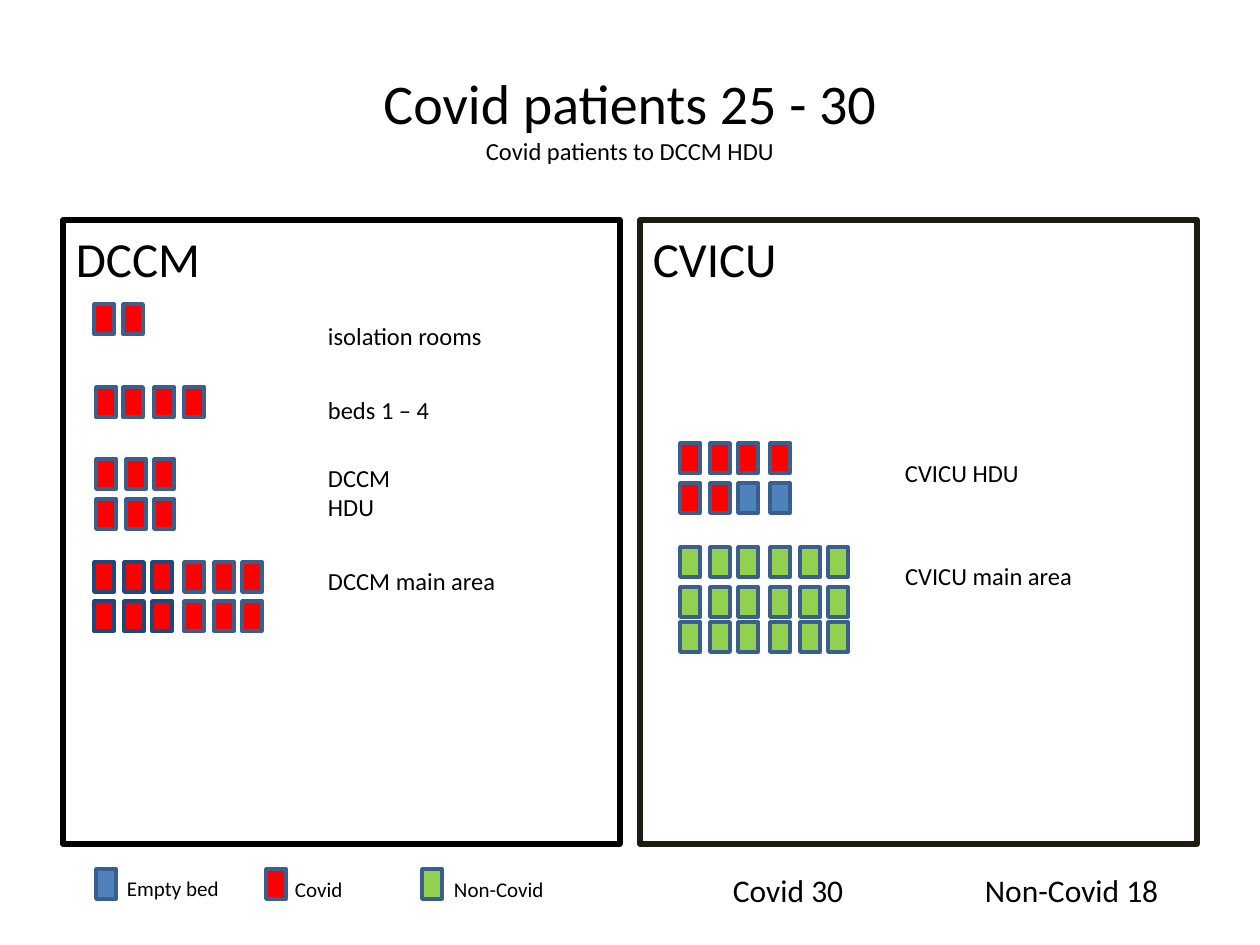
from dataclasses import dataclass
from typing import NamedTuple

from pptx import Presentation
from pptx.dml.color import RGBColor
from pptx.enum.shapes import MSO_SHAPE
from pptx.enum.text import MSO_ANCHOR, PP_ALIGN
from pptx.shapes.autoshape import Shape
from pptx.slide import Slide
from pptx.text.text import TextFrame, _Paragraph
from pptx.util import Emu, Pt

PIXELS_PER_INCH = 126


@dataclass(frozen=True)
class Theme:
    font: str = "Calibri"
    text: str = "000000"
    covid: str = "FF0000"
    non_covid: str = "92D050"
    empty: str = "4F81BD"
    bed_line: str = "3A5F8C"
    dark_bed_line: str = "1F497D"
    dccm_line: str = "000000"
    cvicu_line: str = "1E1C11"
    title_size: int = 32
    heading_size: int = 28
    total_size: int = 18
    label_size: int = 14
    legend_size: int = 12
    panel_line_width: int = 3
    bed_line_width: int = 2


THEME = Theme()


class Box(NamedTuple):
    left: int
    top: int
    width: int
    height: int


class BedStyle(NamedTuple):
    fill: str
    line: str


class Panel(NamedTuple):
    heading: str
    box: Box
    line: str


class BedGroup(NamedTuple):
    left: int
    tops: tuple[int, ...]
    rows: tuple[str, ...]
    offsets: tuple[int, ...] = (0, 30, 58, 90, 120, 148)


class Label(NamedTuple):
    text: str
    left: int
    top: int
    size: int


class LegendEntry(NamedTuple):
    code: str
    bed_left: int
    label: Label


BED_WIDTH, BED_HEIGHT = 20, 30
LEGEND_TOP = 869
BED_STYLES = {
    "C": BedStyle(THEME.covid, THEME.bed_line),
    "D": BedStyle(THEME.covid, THEME.dark_bed_line),
    "N": BedStyle(THEME.non_covid, THEME.bed_line),
    "E": BedStyle(THEME.empty, THEME.bed_line),
}
TITLE_BOX = Box(63, 38, 1134, 158)
PANELS = (
    Panel("DCCM", Box(63, 220, 557, 624), THEME.dccm_line),
    Panel("CVICU", Box(640, 220, 557, 624), THEME.cvicu_line),
)
BED_GROUPS = (
    BedGroup(94, (304,), ("CC",), (0, 29)),
    BedGroup(96, (387,), ("CCCC",), (0, 27, 58, 88)),
    BedGroup(96, (459, 499), ("CCC", "CCC")),
    BedGroup(94, (562, 601), ("DDDCCC", "DDDCCC")),
    BedGroup(680, (443, 483), ("CCCC", "CCEE")),
    BedGroup(680, (547, 587, 622), ("NNNNNN",) * 3),
)
LABELS = (
    Label("isolation rooms", 328, 321, THEME.label_size),
    Label("beds 1 – 4", 328, 395, THEME.label_size),
    Label("DCCM HDU", 328, 463, THEME.label_size),
    Label("DCCM main area", 328, 566, THEME.label_size),
    Label("CVICU HDU", 905, 458, THEME.label_size),
    Label("CVICU main area", 905, 561, THEME.label_size),
    Label("Covid 30", 733, 871, THEME.total_size),
    Label("Non-Covid 18", 985, 871, THEME.total_size),
)
LEGEND = (
    LegendEntry("E", 96, Label("Empty bed", 127, 876, THEME.legend_size)),
    LegendEntry("C", 266, Label("Covid", 295, 877, THEME.legend_size)),
    LegendEntry("N", 422, Label("Non-Covid", 454, 877, THEME.legend_size)),
)


def px(length: int) -> Emu:
    return Emu(round(length * 914400 / PIXELS_PER_INCH))


def place(box: Box) -> tuple[Emu, ...]:
    return tuple(px(length) for length in box)


def add_run(paragraph: _Paragraph, text: str, size: int) -> None:
    run = paragraph.add_run()
    run.text = text
    run.font.name = THEME.font
    run.font.size = Pt(size)
    run.font.color.rgb = RGBColor.from_string(THEME.text)


def set_margins(frame: TextFrame, side: int, top: int) -> None:
    frame.margin_left = frame.margin_right = px(side)
    frame.margin_top = frame.margin_bottom = px(top)


def add_rectangle(slide: Slide, box: Box, line: str, line_width: int) -> Shape:
    shape = slide.shapes.add_shape(MSO_SHAPE.RECTANGLE, *place(box))
    shape.shadow.inherit = False
    shape.line.color.rgb = RGBColor.from_string(line)
    shape.line.width = Pt(line_width)
    return shape


def add_title(slide: Slide) -> None:
    frame = slide.shapes.add_textbox(*place(TITLE_BOX)).text_frame
    frame.word_wrap = True
    frame.vertical_anchor = MSO_ANCHOR.MIDDLE
    paragraph = frame.paragraphs[0]
    paragraph.alignment = PP_ALIGN.CENTER
    add_run(paragraph, "Covid patients 25 - 30", THEME.title_size)
    paragraph.add_line_break()
    add_run(paragraph, "Covid patients to DCCM HDU", THEME.label_size)


def add_panel(slide: Slide, panel: Panel) -> None:
    shape = add_rectangle(slide, panel.box, panel.line, THEME.panel_line_width)
    shape.fill.background()
    frame = shape.text_frame
    frame.vertical_anchor = MSO_ANCHOR.TOP
    set_margins(frame, 13, 9)
    paragraph = frame.paragraphs[0]
    paragraph.alignment = PP_ALIGN.LEFT
    add_run(paragraph, panel.heading, THEME.heading_size)


def add_bed(slide: Slide, left: int, top: int, code: str) -> None:
    style = BED_STYLES[code]
    box = Box(left, top, BED_WIDTH, BED_HEIGHT)
    shape = add_rectangle(slide, box, style.line, THEME.bed_line_width)
    shape.fill.solid()
    shape.fill.fore_color.rgb = RGBColor.from_string(style.fill)


def add_bed_group(slide: Slide, group: BedGroup) -> None:
    for top, row in zip(group.tops, group.rows):
        for offset, code in zip(group.offsets, row):
            add_bed(slide, group.left + offset, top, code)


def add_label(slide: Slide, label: Label) -> None:
    box = Box(label.left, label.top, len(label.text) * label.size, label.size * 2)
    frame = slide.shapes.add_textbox(*place(box)).text_frame
    frame.word_wrap = True
    set_margins(frame, 0, 0)
    add_run(frame.paragraphs[0], label.text, label.size)


def main() -> None:
    presentation = Presentation()
    presentation.slide_width, presentation.slide_height = px(1260), px(945)
    slide = presentation.slides.add_slide(presentation.slide_layouts[6])
    add_title(slide)
    for panel in PANELS:
        add_panel(slide, panel)
    for group in BED_GROUPS:
        add_bed_group(slide, group)
    for entry in LEGEND:
        add_bed(slide, entry.bed_left, LEGEND_TOP, entry.code)
        add_label(slide, entry.label)
    for label in LABELS:
        add_label(slide, label)
    presentation.save("out.pptx")


if __name__ == "__main__":
    main()
